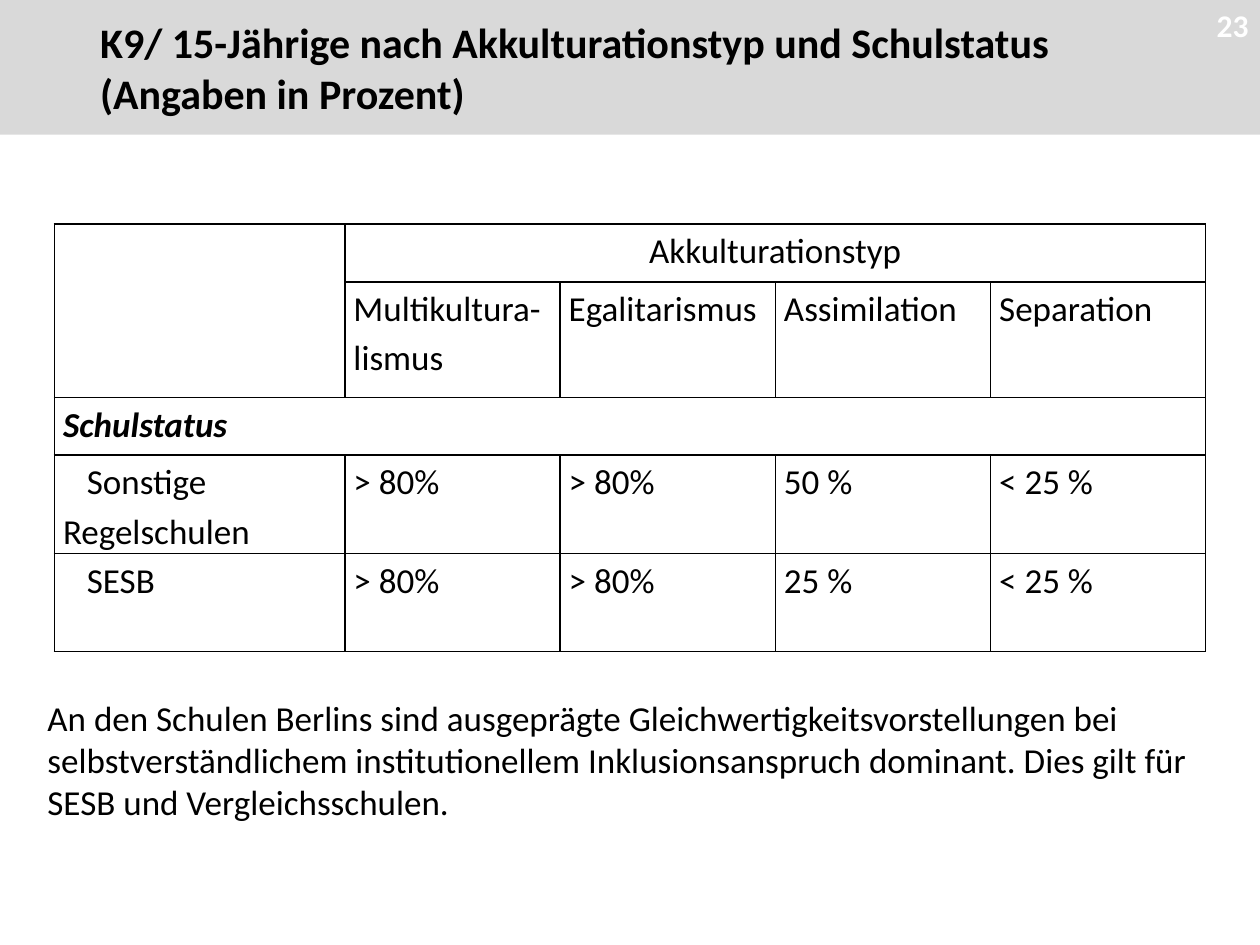
from dataclasses import dataclass

from lxml.etree import SubElement
from pptx import Presentation
from pptx.dml.color import RGBColor
from pptx.enum.text import MSO_ANCHOR, MSO_AUTO_SIZE, PP_ALIGN
from pptx.oxml.ns import qn
from pptx.util import Pt


@dataclass(frozen=True)
class Theme:
    font: str = "Calibri"
    ink: str = "000000"
    band: str = "D9D9D9"
    page: str = "FFFFFF"
    title_size: int = 24
    body_size: int = 20
    number_size: int = 18


THEME = Theme()
COLUMN_WIDTHS = [166] + [123] * 4
ROW_HEIGHTS = [33, 66, 33, 56, 56]
ROWS = [
    ["", "Akkulturationstyp"],
    ["", "Multikultura-lismus", "Egalitarismus", "Assimilation", "Separation"],
    ["Schulstatus"],
    ["Sonstige Regelschulen", "> 80%", "> 80%", "50 %", "< 25 %"],
    ["SESB", "> 80%", "> 80%", "25 %", "< 25 %"],
]


def style(paragraph, size, color=THEME.ink, bold=False, italic=False, align=PP_ALIGN.LEFT):
    paragraph.alignment = align
    font = paragraph.font
    font.name, font.size, font.bold, font.italic = THEME.font, Pt(size), bold, italic
    font.color.rgb = RGBColor.from_string(color)


def indent(paragraph, left=0, first_line=0):
    properties = paragraph._p.get_or_add_pPr()
    properties.set("marL", str(Pt(left)))
    properties.set("indent", str(Pt(first_line)))


def add_title(slide, lines):
    title = slide.shapes.title
    title.left, title.top, title.width, title.height = Pt(0), Pt(0), Pt(720), Pt(77)
    title.fill.solid()
    title.fill.fore_color.rgb = RGBColor.from_string(THEME.band)
    frame = title.text_frame
    frame.text = "\n".join(lines)
    frame.auto_size = MSO_AUTO_SIZE.NONE
    frame.vertical_anchor = MSO_ANCHOR.MIDDLE
    for paragraph in frame.paragraphs:
        style(paragraph, THEME.title_size, bold=True)
        paragraph.space_before = Pt(0)
        indent(paragraph, left=50)


def add_text(slide, text, left, top, width, height, size, **look):
    frame = slide.shapes.add_textbox(Pt(left), Pt(top), Pt(width), Pt(height)).text_frame
    frame.word_wrap = True
    frame.text = text
    style(frame.paragraphs[0], size, **look)
    return frame


def add_borders(cell):
    properties = cell._tc.get_or_add_tcPr()
    for side in ("a:lnL", "a:lnR", "a:lnT", "a:lnB"):
        line = SubElement(properties, qn(side), w=str(Pt(1)))
        fill = SubElement(line, qn("a:solidFill"))
        SubElement(fill, qn("a:srgbClr"), val=THEME.ink)


def fill_cell(cell, text, **look):
    cell.margin_left = cell.margin_right = Pt(5)
    cell.margin_top = cell.margin_bottom = Pt(0)
    add_borders(cell)
    cell.fill.background()
    cell.text = text
    paragraph = cell.text_frame.paragraphs[0]
    paragraph.line_spacing = 1.15
    style(paragraph, THEME.body_size, **look)
    return paragraph


def add_acculturation_table(slide):
    table = slide.shapes.add_table(
        len(ROW_HEIGHTS), len(COLUMN_WIDTHS), Pt(31), Pt(128),
        Pt(sum(COLUMN_WIDTHS)), Pt(sum(ROW_HEIGHTS))).table
    table.first_row = table.horz_banding = False
    for column, width in zip(table.columns, COLUMN_WIDTHS):
        column.width = Pt(width)
    for row, height in zip(table.rows, ROW_HEIGHTS):
        row.height = Pt(height)

    for r, values in enumerate(ROWS):
        for c in range(len(COLUMN_WIDTHS)):
            text = values[c] if c < len(values) else ""
            is_section = r == 2
            paragraph = fill_cell(
                table.cell(r, c), text, bold=is_section, italic=is_section,
                align=PP_ALIGN.CENTER if r == 0 else PP_ALIGN.LEFT)
            if r > 2 and c == 0:
                indent(paragraph, first_line=13.6)

    # Spanning header and section cells
    for first, last in (((0, 0), (1, 0)), ((0, 1), (0, 4)), ((2, 0), (2, 4))):
        table.cell(*first).merge(table.cell(*last))


def main():
    presentation = Presentation()
    presentation.slide_width, presentation.slide_height = Pt(720), Pt(540)
    slide = presentation.slides.add_slide(presentation.slide_layouts[5])

    # Heading band
    add_title(slide, ["K9/ 15-Jährige nach Akkulturationstyp und Schulstatus",
                      "(Angaben in Prozent)"])

    # Results and conclusion
    add_acculturation_table(slide)
    add_text(slide, "An den Schulen Berlins sind ausgeprägte Gleichwertigkeitsvorstellungen "
             "bei selbstverständlichem institutionellem Inklusionsanspruch dominant. "
             "Dies gilt für SESB und Vergleichsschulen.",
             20, 394.5, 680, 80, THEME.body_size)

    # Page number
    number = add_text(slide, "23", 634, 0, 79.5, 29, THEME.number_size,
                      color=THEME.page, bold=True, align=PP_ALIGN.RIGHT)
    number.margin_left = number.margin_right = number.margin_top = number.margin_bottom = Pt(0)
    number.vertical_anchor = MSO_ANCHOR.MIDDLE

    presentation.save("out.pptx")


if __name__ == "__main__":
    main()
